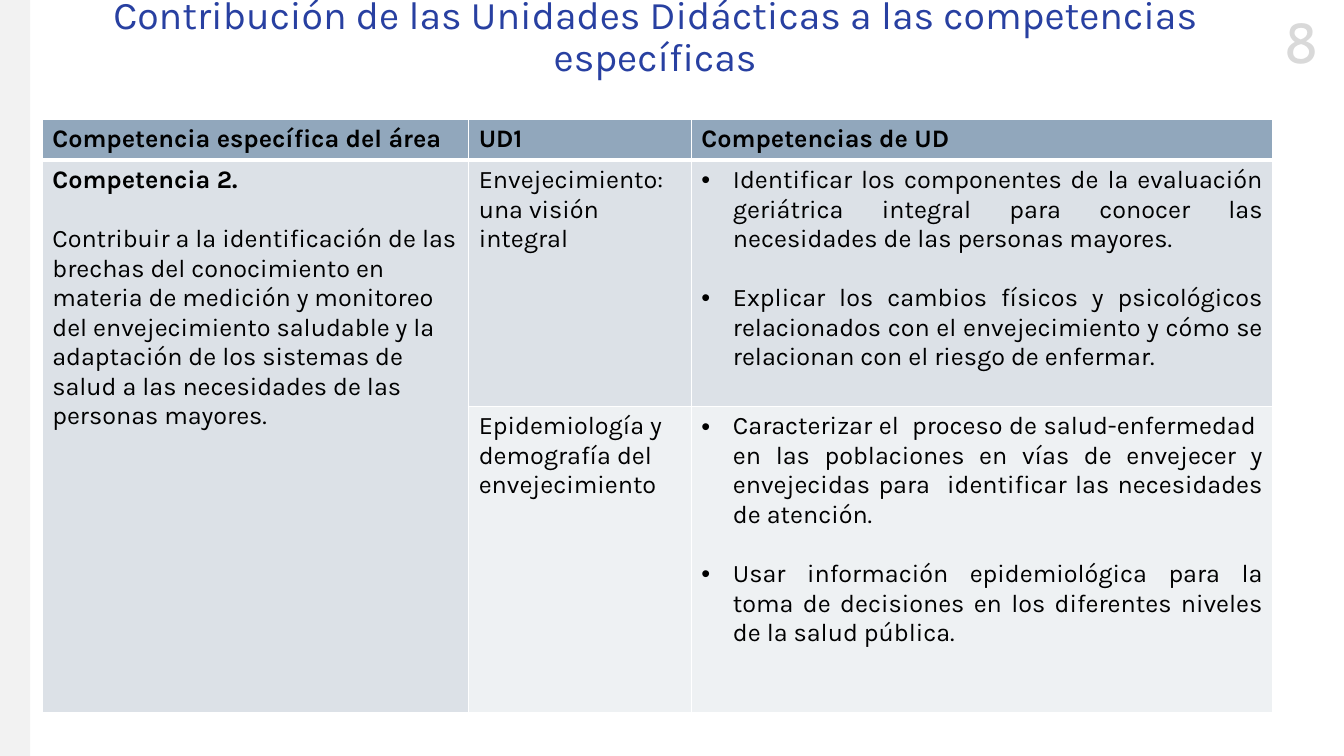
from dataclasses import dataclass

from lxml.etree import SubElement
from pptx import Presentation
from pptx.dml.color import RGBColor
from pptx.enum.shapes import MSO_SHAPE
from pptx.enum.text import MSO_ANCHOR, MSO_AUTO_SIZE, PP_ALIGN
from pptx.oxml.ns import qn
from pptx.slide import Slide
from pptx.table import Table, _Cell
from pptx.text.text import TextFrame, _Paragraph
from pptx.util import Pt

BODY_FONT = "Karla"
NUMBER_FONT = "Cabin"
WHITE, BLACK, BLUE = "FFFFFF", "000000", "2840A1"
STRIP_GREY, NUMBER_GREY = "F2F2F2", "D9D9D9"
HEADER_FILL, FIRST_FILL, SECOND_FILL = "91A7BC", "DCE1E7", "EEF1F3"
COLUMN_WIDTHS = (304.6, 159.1, 415.4)
ROW_HEIGHTS = (29.5, 176, 218.5)
BULLET_INDENT = 22.5
ITEM_GAP = 21


@dataclass(frozen=True)
class Item:
    text: str
    bold: bool = False
    bullet: bool = False


@dataclass(frozen=True)
class CellContent:
    row: int
    column: int
    fill: str
    items: tuple[Item, ...]


HEADERS = ("Competencia específica del área", "UD1", "Competencias de UD")
CELLS = [
    CellContent(0, column, HEADER_FILL, (Item(header, bold=True),))
    for column, header in enumerate(HEADERS)
] + [
    CellContent(1, 0, FIRST_FILL, (
        Item("Competencia 2.", bold=True),
        Item("Contribuir a la identificación de las brechas del conocimiento en "
             "materia de medición y monitoreo del envejecimiento saludable y la "
             "adaptación de los sistemas de salud a las necesidades de las "
             "personas mayores."),
    )),
    CellContent(1, 1, FIRST_FILL, (Item("Envejecimiento: una visión integral"),)),
    CellContent(1, 2, FIRST_FILL, (
        Item("Identificar los componentes de la evaluación geriátrica integral "
             "para conocer las necesidades de las personas mayores.", bullet=True),
        Item("Explicar los cambios físicos y psicológicos relacionados con el "
             "envejecimiento y cómo se relacionan con el riesgo de enfermar.",
             bullet=True),
    )),
    CellContent(2, 1, SECOND_FILL, (
        Item("Epidemiología y demografía del envejecimiento"),
    )),
    CellContent(2, 2, SECOND_FILL, (
        Item("Caracterizar el  proceso de salud-enfermedad  en las poblaciones en "
             "vías de envejecer y envejecidas para  identificar las necesidades "
             "de atención.", bullet=True),
        Item("Usar información epidemiológica para la toma de decisiones en los "
             "diferentes niveles de la salud pública.", bullet=True),
    )),
]


def color(value: str) -> RGBColor:
    return RGBColor.from_string(value)


def apply_format(target: object, values: dict[str, object]) -> None:
    for name, value in values.items():
        setattr(target, name, value)


def add_span(para: _Paragraph, text: str, size: float, hex_color: str,
             font: str = BODY_FONT, bold: bool = False) -> None:
    span = para.add_run()
    span.text = text
    apply_format(span.font, {"name": font, "size": Pt(size), "bold": bold})
    span.font.color.rgb = color(hex_color)


def add_bullet(para: _Paragraph) -> None:
    properties = para._p.get_or_add_pPr()
    properties.set("marL", str(Pt(BULLET_INDENT)))
    properties.set("indent", str(-Pt(BULLET_INDENT)))
    SubElement(properties, qn("a:buFont"), typeface="Arial")
    SubElement(properties, qn("a:buChar"), char="•")


def write_items(frame: TextFrame, items: tuple[Item, ...]) -> None:
    for index, item in enumerate(items):
        para = frame.add_paragraph() if index else frame.paragraphs[0]
        if index:
            para.space_before = Pt(ITEM_GAP)
        if item.bullet:
            add_bullet(para)
            para.alignment = PP_ALIGN.JUSTIFY
        add_span(para, item.text, 18, BLACK, bold=item.bold)


def add_borders(cell: _Cell, bottom_width: float) -> None:
    properties = cell._tc.get_or_add_tcPr()
    widths = {"lnL": 1, "lnR": 1, "lnT": 1, "lnB": bottom_width}
    for side, width in widths.items():
        line = SubElement(properties, qn(f"a:{side}"), w=str(Pt(width)))
        fill = SubElement(line, qn("a:solidFill"))
        SubElement(fill, qn("a:srgbClr"), val=WHITE)


def fill_cell(table: Table, content: CellContent) -> None:
    cell = table.cell(content.row, content.column)
    write_items(cell.text_frame, content.items)
    cell.fill.solid()
    cell.fill.fore_color.rgb = color(content.fill)


def add_competence_table(page: Slide) -> None:
    frame = page.shapes.add_table(
        len(ROW_HEIGHTS), len(COLUMN_WIDTHS), Pt(30.2), Pt(85),
        Pt(sum(COLUMN_WIDTHS)), Pt(sum(ROW_HEIGHTS)))
    table = frame.table
    for column, width in zip(table.columns, COLUMN_WIDTHS):
        column.width = Pt(width)
    for index, (row, height) in enumerate(zip(table.rows, ROW_HEIGHTS)):
        row.height = Pt(height)
        for cell in row.cells:
            add_borders(cell, 1 if index else 3)
    table.cell(1, 0).merge(table.cell(2, 0))
    for content in CELLS:
        fill_cell(table, content)


def add_side_strip(page: Slide) -> None:
    strip = page.shapes.add_shape(MSO_SHAPE.RECTANGLE, 0, 0, Pt(21.6), Pt(540))
    strip.shadow.inherit = False
    strip.fill.solid()
    strip.fill.fore_color.rgb = color(STRIP_GREY)
    strip.line.fill.background()


def add_page_number(page: Slide) -> None:
    box = page.shapes.add_textbox(Pt(903), Pt(1.5), Pt(54), Pt(55.5))
    box.text_frame.word_wrap = False
    para = box.text_frame.paragraphs[0]
    para.alignment = PP_ALIGN.CENTER
    add_span(para, "8", 40, NUMBER_GREY, NUMBER_FONT)


def format_title(page: Slide) -> None:
    title = page.shapes.title
    apply_format(title, {"left": Pt(23), "top": Pt(0),
                         "width": Pt(890), "height": Pt(54)})
    apply_format(title.text_frame, {"vertical_anchor": MSO_ANCHOR.MIDDLE,
                                    "word_wrap": True,
                                    "auto_size": MSO_AUTO_SIZE.NONE})
    para = title.text_frame.paragraphs[0]
    apply_format(para, {"alignment": PP_ALIGN.CENTER, "line_spacing": 0.9,
                        "space_before": Pt(0)})
    add_span(para, "Contribución de las Unidades Didácticas a las competencias "
             "específicas", 28, BLUE)


def main() -> None:
    deck = Presentation()
    apply_format(deck, {"slide_width": Pt(960), "slide_height": Pt(540)})
    page = deck.slides.add_slide(deck.slide_layouts.get_by_name("Title Only"))
    add_page_number(page)
    add_side_strip(page)
    format_title(page)
    add_competence_table(page)
    deck.save("out.pptx")


if __name__ == "__main__":
    main()
